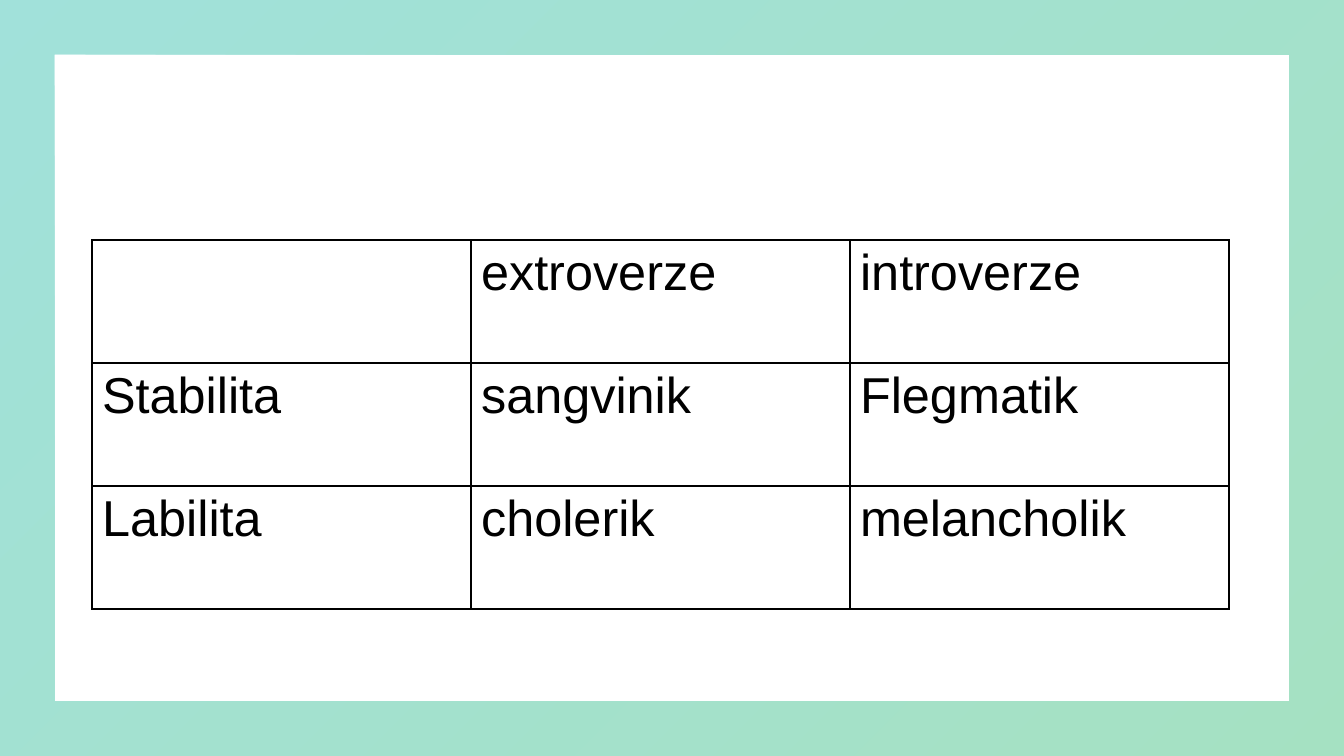
from dataclasses import dataclass

from lxml import etree
from pptx import Presentation
from pptx import util as u
from pptx.dml.color import RGBColor
from pptx.enum import shapes
from pptx.oxml.ns import qn

TEMPERAMENTS = [
    ["", "extroverze", "introverze"],
    ["Stabilita", "sangvinik", "Flegmatik"],
    ["Labilita", "cholerik", "melancholik"],
]
PAGE_WIDTH, PAGE_HEIGHT = 1344, 756
TABLE_LEFT, TABLE_TOP = 92, 240
COLUMN_WIDTH, ROW_HEIGHT = 379, 123
FRAME_THICKNESS = 0.072


@dataclass(frozen=True)
class Theme:
    font: str = "Arial"
    size: int = 36
    ink: str = "000000"
    border: float = 1
    gradient: tuple = ("14B4A4", "20B668")
    opacity: int = 40


THEME = Theme()


def px(length):
    return u.Emu(round(length * 914400 / 100.8))


def add_frame(page):
    frame = page.shapes.add_shape(
        shapes.MSO_SHAPE.FRAME, 0, 0, px(PAGE_WIDTH), px(PAGE_HEIGHT))
    frame.adjustments[0] = FRAME_THICKNESS
    frame.shadow.inherit = False
    frame.line.fill.background()
    frame.fill.gradient()
    frame.fill.gradient_angle = 315
    for stop, color in zip(frame.fill.gradient_stops, THEME.gradient):
        stop.color.rgb = RGBColor.from_string(color)
    for color in frame.element.spPr.iter(qn("a:srgbClr")):
        etree.SubElement(color, qn("a:alpha"), val=str(THEME.opacity * 1000))


def add_borders(cell):
    properties = cell._tc.get_or_add_tcPr()
    for side in ("lnL", "lnR", "lnT", "lnB"):
        line = etree.SubElement(
            properties, qn(f"a:{side}"), w=str(u.Pt(THEME.border)))
        fill = etree.SubElement(line, qn("a:solidFill"))
        etree.SubElement(fill, qn("a:srgbClr"), val=THEME.ink)


def fill_cell(cell, label):
    add_borders(cell)
    cell.fill.background()
    para = cell.text_frame.paragraphs[0]
    para.text = label
    for span in para.runs:
        span.font.name = THEME.font
        span.font.size = u.Pt(THEME.size)
        span.font.color.rgb = RGBColor.from_string(THEME.ink)


def add_temperament_table(page):
    rows, columns = len(TEMPERAMENTS), len(TEMPERAMENTS[0])
    table = page.shapes.add_table(
        rows, columns, px(TABLE_LEFT), px(TABLE_TOP),
        px(columns * COLUMN_WIDTH), px(rows * ROW_HEIGHT)).table
    table.first_row = table.horz_banding = False
    for row, labels in enumerate(TEMPERAMENTS):
        for column, label in enumerate(labels):
            fill_cell(table.cell(row, column), label)


def main():
    deck = Presentation()
    deck.slide_width, deck.slide_height = px(PAGE_WIDTH), px(PAGE_HEIGHT)
    page = deck.slides.add_slide(deck.slide_layouts[6])
    add_frame(page)
    add_temperament_table(page)
    deck.save("out.pptx")


if __name__ == "__main__":
    main()
